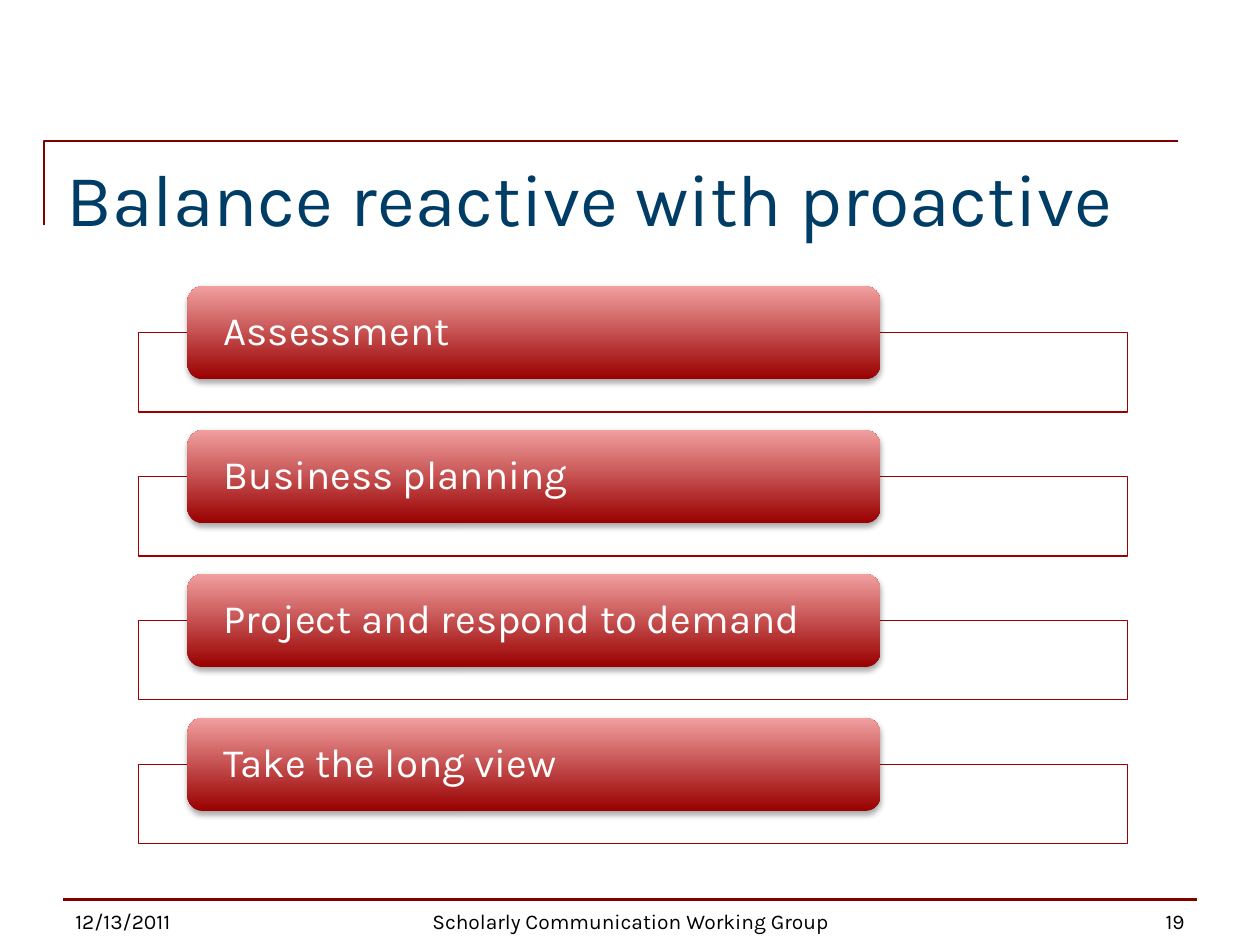
"""Build the slide on balancing reactive with proactive work."""
from lxml.etree import SubElement
from pptx import Presentation
from pptx.dml.color import RGBColor
from pptx.enum.shapes import MSO_CONNECTOR, MSO_SHAPE
from pptx.enum.text import MSO_ANCHOR as ANCHOR, PP_ALIGN as ALIGN
from pptx.oxml.ns import qn
from pptx.util import Cm, Pt

MAROON = RGBColor(0x80, 0x00, 0x00)
RED = RGBColor(0x99, 0x00, 0x00)
PINK = RGBColor(0xF1, 0x9F, 0x9F)
NAVY = RGBColor(0x00, 0x3D, 0x66)
BLACK = RGBColor(0x00, 0x00, 0x00)
WHITE = RGBColor(0xFF, 0xFF, 0xFF)
FONT = "Karla"


def write(sp, text, size, color, align=ALIGN.LEFT, anchor=ANCHOR.TOP):
    tf = sp.text_frame
    tf.word_wrap = True
    tf.vertical_anchor = anchor
    p = tf.paragraphs[0]
    p.alignment = align
    r = p.add_run()
    r.text = text
    r.font.name = FONT
    r.font.size = Pt(size)
    r.font.color.rgb = color
    return tf


prs = Presentation()
prs.slide_width, prs.slide_height = Cm(25.4), Cm(19.05)
s = prs.slides.add_slide(prs.slide_layouts[6])
shapes = s.shapes

builder = shapes.build_freeform(Cm(0.89), Cm(4.53))
builder.add_line_segments([(Cm(0.89), Cm(2.84)), (Cm(23.75), Cm(2.84))], close=False)
corner = builder.convert_to_shape()
corner.shadow.inherit = False
corner.fill.background()

rule = shapes.add_connector(MSO_CONNECTOR.STRAIGHT, Cm(1.27), Cm(18.13), Cm(24.13), Cm(18.13))
SubElement(rule._element.spPr, qn("a:effectLst"))
for sp in (corner, rule):
    sp.line.color.rgb = MAROON
    sp.line.width = Pt(1.5)

title = shapes.add_textbox(Cm(1.09), Cm(2.97), Cm(22.86), Cm(3.18))
write(title, "Balance reactive with proactive", 42, NAVY)

footers = [
    (1.27, 5.92, "12/13/2011", ALIGN.LEFT),
    (7.47, 10.49, "Scholarly Communication Working Group", ALIGN.CENTER),
    (18.21, 5.92, "19", ALIGN.RIGHT),
]
for left, width, text, align in footers:
    sp = shapes.add_textbox(Cm(left), Cm(17.68), Cm(width), Cm(1.27))
    write(sp, text, 12, BLACK, align, ANCHOR.BOTTOM)

topics = ["Assessment", "Business planning", "Project and respond to demand", "Take the long view"]
for i, topic in enumerate(topics):
    top = 5.77 + 2.9 * i

    frame = shapes.add_shape(MSO_SHAPE.RECTANGLE, Cm(2.79), Cm(top + 0.94), Cm(19.94), Cm(1.6))
    frame.shadow.inherit = False
    frame.fill.solid()
    frame.fill.fore_color.rgb = WHITE
    clr = frame._element.spPr.find(qn("a:solidFill")).find(qn("a:srgbClr"))
    SubElement(clr, qn("a:alpha"), val="90000")
    frame.line.color.rgb = RED
    frame.line.width = Pt(0.75)

    bar = shapes.add_shape(MSO_SHAPE.ROUNDED_RECTANGLE, Cm(3.78), Cm(top), Cm(13.97), Cm(1.88))
    bar.line.fill.background()
    bar.fill.gradient()
    bar.fill.gradient_angle = 90
    for stop, color in zip(bar.fill.gradient_stops, (RED, PINK)):
        stop.color.rgb = color
    bar.shadow.inherit = False
    effects = bar._element.spPr.find(qn("a:effectLst"))
    shadow = SubElement(effects, qn("a:outerShdw"), blurRad=str(Pt(3.1)), dist=str(Pt(1.8)),
                        dir="5400000", rotWithShape="0")
    clr = SubElement(shadow, qn("a:srgbClr"), val=str(BLACK))
    SubElement(clr, qn("a:alpha"), val="35000")

    tf = write(bar, topic, 23, WHITE, anchor=ANCHOR.MIDDLE)
    tf.margin_left = tf.margin_right = Cm(0.64)
    tf.margin_top = tf.margin_bottom = Cm(0)
    tf.paragraphs[0].line_spacing = 0.9

prs.save("out.pptx")
